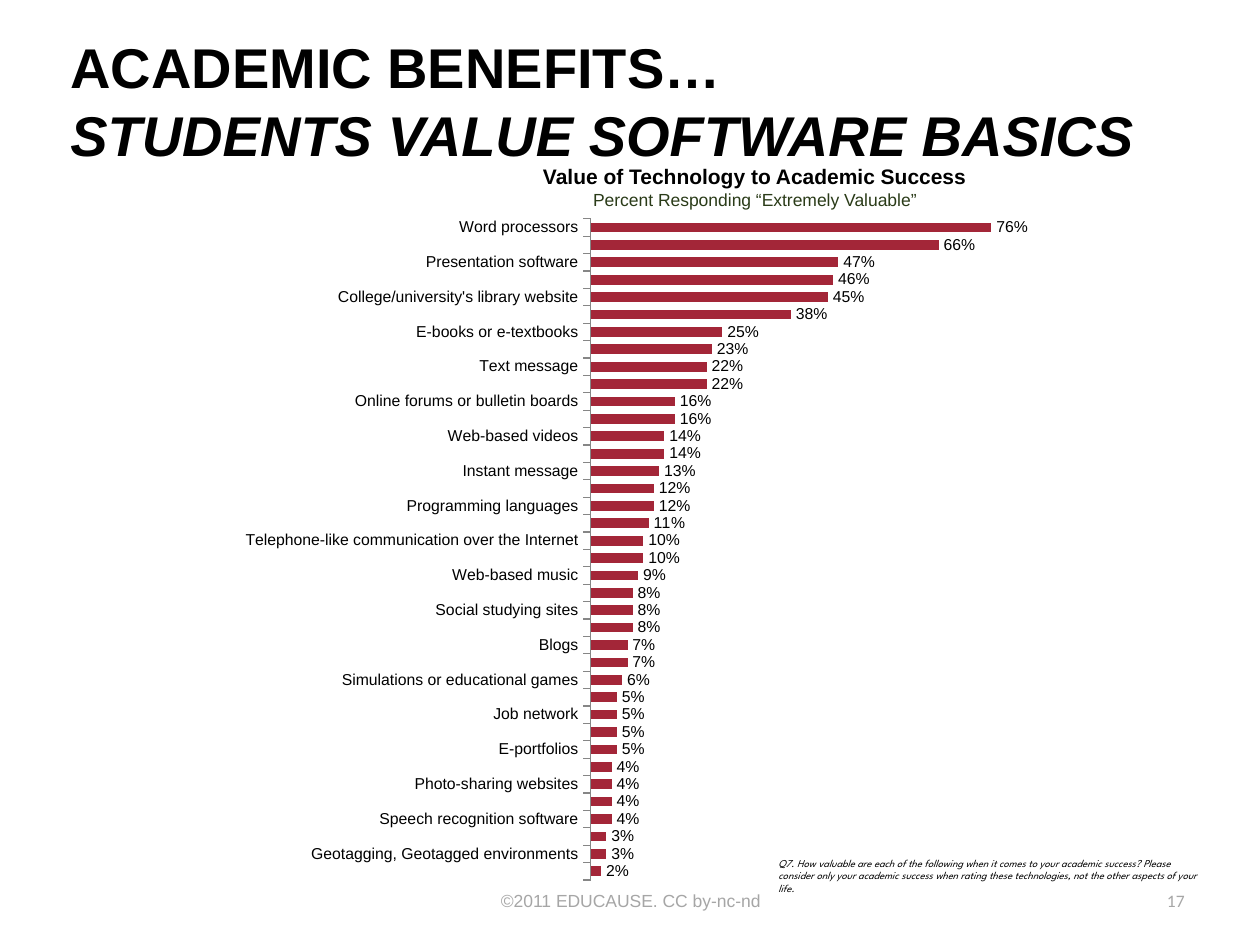
from lxml import etree
from pptx import Presentation
from pptx import util as u
from pptx.chart.data import CategoryChartData
from pptx.dml.color import RGBColor
from pptx.enum import chart as ch, text
from pptx.oxml.ns import qn

BLACK, GREY, GREEN, RED = "000000", "A6A6A6", "2A3B18", "A32638"
LEFT, CENTER, RIGHT = text.PP_ALIGN.LEFT, text.PP_ALIGN.CENTER, text.PP_ALIGN.RIGHT
TOP, MIDDLE = text.MSO_ANCHOR.TOP, text.MSO_ANCHOR.MIDDLE

HEADING = ("ACADEMIC BENEFITS…", "STUDENTS VALUE SOFTWARE BASICS")
CHART_TITLE = [
    ("Value of Technology to Academic Success", 12, "Arial", BLACK, True, False),
    ("Percent Responding “Extremely Valuable”", 10, "Arial", GREEN, False, False),
]
QUESTION = [(
    "Q7. How valuable are each of the following when it comes to your academic success? "
    "Please consider only your academic success when rating these technologies, "
    "not the other aspects of your life.", 6, "League Spartan", BLACK, False, True)]
COPYRIGHT = [("©2011 EDUCAUSE. CC by-nc-nd", 10, "Arial", GREY, False, False)]
PAGE_NUMBER = [("17", 10, "Calibri", GREY, False, False)]

TECHNOLOGIES = [
    ("Word processors", 0.76),
    ("E-mail", 0.66),
    ("Presentation software", 0.47),
    ("Course or learning management system", 0.46),
    ("College/university's library website", 0.45),
    ("Spreadsheets", 0.38),
    ("E-books or e-textbooks", 0.25),
    ("Web-based citation/bibliography tools", 0.23),
    ("Text message", 0.22),
    ("Wikis", 0.22),
    ("Online forums or bulletin boards", 0.16),
    ("Graphics software", 0.16),
    ("Web-based videos", 0.14),
    ("Video-sharing websites", 0.14),
    ("Instant message", 0.13),
    ("Friend network", 0.12),
    ("Programming languages", 0.12),
    ("Freely available course content beyond campus", 0.11),
    ("Telephone-like communication over the Internet", 0.10),
    ("Online chats, chat events, webinars", 0.10),
    ("Web-based music", 0.09),
    ("Podcasts and webcasts", 0.08),
    ("Social studying sites", 0.08),
    ("Video-creation software", 0.08),
    ("Blogs", 0.07),
    ("Tagging/bookmarking/liking", 0.07),
    ("Simulations or educational games", 0.06),
    ("Online multi-user computer games", 0.05),
    ("Job network", 0.05),
    ("Internet content via a TV", 0.05),
    ("E-portfolios", 0.05),
    ("Microblogs", 0.04),
    ("Photo-sharing websites", 0.04),
    ("Audio-creation software", 0.04),
    ("Speech recognition software", 0.04),
    ("Other social networking websites", 0.03),
    ("Geotagging, Geotagged environments", 0.03),
    ("Online virtual worlds", 0.02),
]
PLOT_AREA = {"x": 0.386, "y": 0.039, "w": 0.584, "h": 0.944}


def color(value):
    return RGBColor.from_string(value)


def set_font(font, size, name, value, bold=False, italic=False):
    font.size, font.name = u.Pt(size), name
    font.color.rgb = color(value)
    font.bold, font.italic = bold, italic


def add_frame(page, at, anchor):
    frame = page.shapes.add_textbox(*map(u.Inches, at)).text_frame
    frame.word_wrap = True
    frame.vertical_anchor = anchor
    return frame


def add_span(para, words, *style):
    span = para.add_run()
    span.text = words
    set_font(span.font, *style)


def add_text(page, at, lines, align, anchor):
    frame = add_frame(page, at, anchor)
    for index, line in enumerate(lines):
        para = frame.add_paragraph() if index else frame.paragraphs[0]
        para.alignment = align
        add_span(para, *line)


def add_heading(page):
    para = add_frame(page, (0.46, 0.17, 9.17, 1.25), MIDDLE).paragraphs[0]
    first, second = HEADING
    add_span(para, first, 32, "Arial", BLACK, True)
    para.add_line_break()
    add_span(para, second, 32, "Arial", BLACK, True, True)


def place_plot(chart):
    area = chart._chartSpace.chart.plotArea
    for old in area.findall(qn("c:layout")):
        area.remove(old)
    layout = etree.Element(qn("c:layout"))
    manual = etree.SubElement(layout, qn("c:manualLayout"))
    settings = {"layoutTarget": "inner", "xMode": "edge", "yMode": "edge", **PLOT_AREA}
    for tag, value in settings.items():
        etree.SubElement(manual, qn("c:" + tag)).set("val", str(value))
    area.insert(0, layout)


def add_value_chart(page):
    data = CategoryChartData(number_format="0%")
    data.categories = [name for name, share in TECHNOLOGIES]
    data.add_series("Series 1", [share for name, share in TECHNOLOGIES])
    at = map(u.Inches, (1.92, 1.52, 7.17, 5.56))
    chart = page.shapes.add_chart(ch.XL_CHART_TYPE.BAR_CLUSTERED, *at, data).chart
    chart.has_title = chart.has_legend = False
    set_font(chart.font, 18, "Calibri", BLACK)

    plot = chart.plots[0]
    plot.gap_width = 80
    plot.vary_by_categories = False
    bars = plot.series[0].format.fill
    bars.solid()
    bars.fore_color.rgb = color(RED)
    plot.has_data_labels = True
    labels = plot.data_labels
    labels.show_value = True
    labels.number_format, labels.number_format_is_linked = "0%", False
    labels.position = ch.XL_LABEL_POSITION.OUTSIDE_END
    set_font(labels.font, 9, "Arial", BLACK)

    names = chart.category_axis
    names.reverse_order = True
    names.has_major_gridlines = False
    names.major_tick_mark = ch.XL_TICK_MARK.OUTSIDE
    names.minor_tick_mark = ch.XL_TICK_MARK.NONE
    names.format.line.color.rgb = color("868686")
    set_font(names.tick_labels.font, 9, "Arial", BLACK)
    skip = etree.Element(qn("c:tickLblSkip"), val="2")
    names._element.find(qn("c:noMultiLvlLbl")).addprevious(skip)

    shares = chart.value_axis
    shares.minimum_scale, shares.maximum_scale = 0, 1
    shares.has_major_gridlines = False
    shares.visible = False
    place_plot(chart)


def main():
    deck = Presentation()
    deck.slide_width, deck.slide_height = u.Inches(10), u.Inches(7.5)
    page = deck.slides.add_slide(deck.slide_layouts[6])
    add_heading(page)
    add_text(page, (3.42, 6.95, 3.17, 0.4), COPYRIGHT, CENTER, MIDDLE)
    add_text(page, (7.17, 6.95, 2.33, 0.4), PAGE_NUMBER, RIGHT, MIDDLE)
    add_text(page, (6.08, 6.75, 3.54, 0.4), QUESTION, LEFT, TOP)
    add_value_chart(page)
    add_text(page, (4, 1.25, 3.98, 0.77), CHART_TITLE, CENTER, TOP)
    deck.save("out.pptx")


if __name__ == "__main__":
    main()
